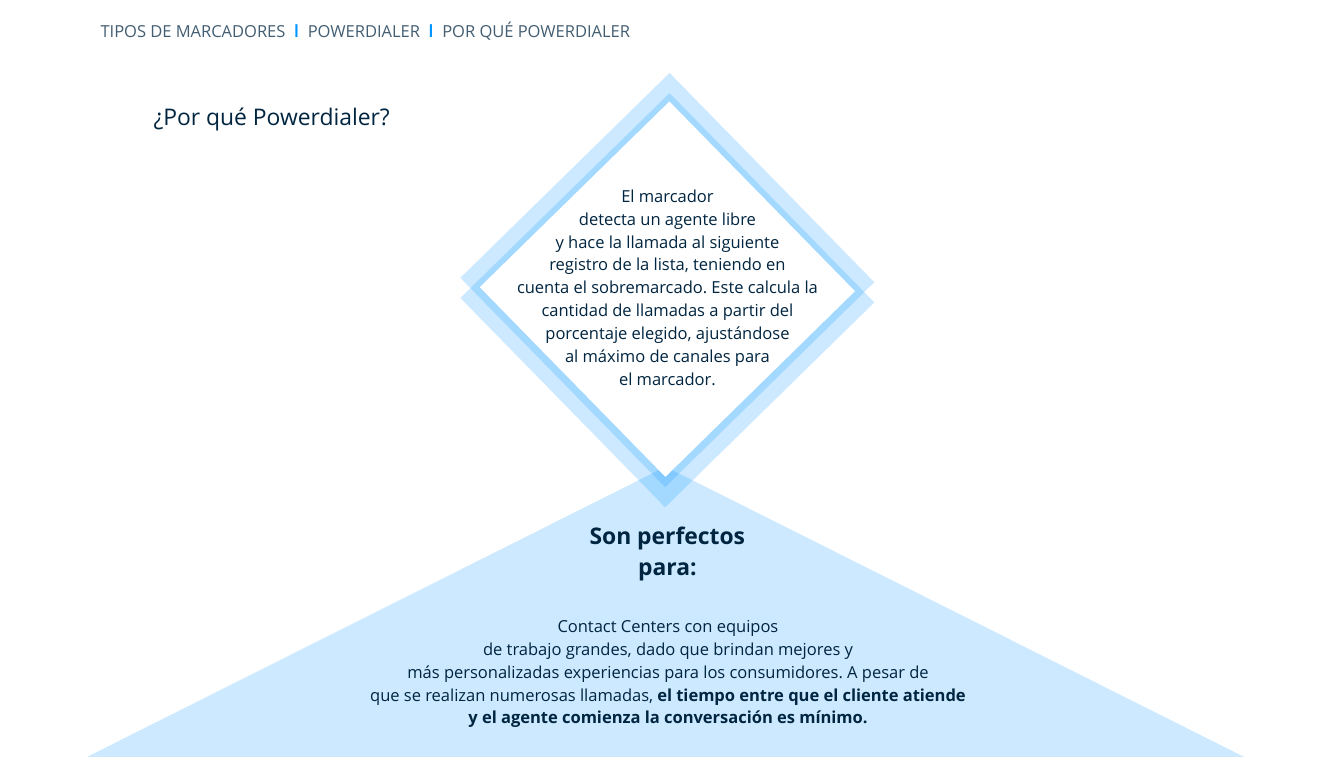
from lxml import etree
from pptx import Presentation
from pptx import util as u
from pptx.dml.color import RGBColor
from pptx.enum import shapes, text
from pptx.oxml import ns

WHITE = RGBColor(0xFF, 0xFF, 0xFF)
BLUE = RGBColor(0x00, 0x95, 0xFF)
NAVY = RGBColor(0x00, 0x25, 0x40)
SLATE = RGBColor(0x43, 0x5E, 0x72)

BREADCRUMB = ["TIPOS DE MARCADORES", "POWERDIALER", "POR QUÉ POWERDIALER"]
DESCRIPTION = [
    "El marcador",
    "detecta un agente libre",
    "y hace la llamada al siguiente",
    "registro de la lista, teniendo en",
    "cuenta el sobremarcado. Este calcula la cantidad de llamadas a partir del "
    "porcentaje elegido, ajustándose",
    "al máximo de canales para",
    "el marcador.",
]
AUDIENCE = [
    "Contact Centers con equipos",
    "de trabajo grandes, dado que brindan mejores y",
    "más personalizadas experiencias para los consumidores. A pesar de",
    [("que se realizan numerosas llamadas, ", False),
     ("el tiempo entre que el cliente atiende", True)],
    [("y el agente comienza la conversación es mínimo.", True)],
]


def add_run(paragraph, content, size=13, color=NAVY, bold=False, font="Open Sans"):
    """Add one formatted run to a paragraph."""
    run = paragraph.add_run()
    run.text = content
    run.font.name = font
    run.font.size = u.Pt(size)
    run.font.bold = bold
    run.font.color.rgb = color


def set_frame(frame, margin_x, margin_y, anchor):
    """Set wrapping, margins and anchor of a text frame."""
    frame.word_wrap = True
    frame.auto_size = text.MSO_AUTO_SIZE.NONE
    frame.vertical_anchor = anchor
    frame.margin_left = frame.margin_right = u.Inches(margin_x)
    frame.margin_top = frame.margin_bottom = u.Inches(margin_y)


def add_text(slide, box, lines, margins=(0.1, 0.1), spacing=1.15, size=13, bold=False):
    """Add a centred text box with one paragraph per line."""
    frame = slide.shapes.add_textbox(*map(u.Inches, box)).text_frame
    set_frame(frame, *margins, text.MSO_ANCHOR.TOP)
    for index, line in enumerate(lines):
        paragraph = frame.add_paragraph() if index else frame.paragraphs[0]
        paragraph.alignment = text.PP_ALIGN.CENTER
        paragraph.line_spacing = spacing
        pieces = [(line, bold)] if isinstance(line, str) else line
        for content, is_bold in pieces:
            add_run(paragraph, content, size=size, bold=is_bold)


def add_panel(slide, kind, box, color, opacity=100, rotation=0):
    """Add a plain filled shape without outline."""
    shape = slide.shapes.add_shape(kind, *map(u.Inches, box))
    shape.shadow.inherit = False
    shape.line.fill.background()
    shape.fill.solid()
    shape.fill.fore_color.rgb = color
    shape.rotation = rotation
    if opacity < 100:
        tint = shape.fill._xPr.find(ns.qn("a:solidFill"))[0]
        etree.SubElement(tint, ns.qn("a:alpha"), val=str(opacity * 1000))


def add_breadcrumb(slide, box):
    """Fill the title with the breadcrumb and its blue dividers."""
    title = slide.shapes.title
    title.left, title.top, title.width, title.height = map(u.Inches, box)
    title.fill.solid()
    title.fill.fore_color.rgb = WHITE
    set_frame(title.text_frame, 0.15, 0.15, text.MSO_ANCHOR.MIDDLE)
    paragraph = title.text_frame.paragraphs[0]
    paragraph.alignment = text.PP_ALIGN.LEFT
    paragraph.line_spacing = 1.0
    last = len(BREADCRUMB) - 1
    for index, step in enumerate(BREADCRUMB):
        if index:
            add_run(paragraph, "|", size=14, color=BLUE, bold=True, font="Manrope")
        before, after = "  " if index else "", "  " if index < last else ""
        add_run(paragraph, before + step + after, color=SLATE)


def add_audience(slide, box):
    """Add the wide triangle with its heading and text."""
    left, top, width, height = box
    center = left + width / 2
    add_panel(slide, shapes.MSO_SHAPE.ISOSCELES_TRIANGLE, box, BLUE, opacity=20)
    add_text(slide, (center - 3.46, top + 1.5, 6.97, height - 1.74), AUDIENCE)
    add_text(slide, (center - 1.18, top + 0.49, 2.4, 0.84), ["Son perfectos para:"],
             margins=(0.11, 0.06), size=18, bold=True)


def add_diamond(slide, box):
    """Add the layered diamond and the description inside it."""
    left, top, width, height = box
    center = left + width / 2
    layers = [(3.2, 1.6, BLUE, 20), (3.2, 1.38, BLUE, 20), (2.9, 1.48, WHITE, 100)]
    for side, middle, color, opacity in layers:
        square = (center - side / 2, top + middle - side / 2, side, side)
        add_panel(slide, shapes.MSO_SHAPE.RECTANGLE, square, color, opacity, rotation=45.6)
    add_text(slide, (left, top + 0.22, width, height - 0.22), DESCRIPTION)


def main():
    """Build and save the slide."""
    presentation = Presentation()
    presentation.slide_width = u.Inches(14.69)
    presentation.slide_height = u.Inches(8.27)
    slide = presentation.slides.add_slide(presentation.slide_layouts[5])
    add_breadcrumb(slide, (0.95, 0.1, 7.27, 0.47))
    add_audience(slide, (0.95, 5.1, 12.65, 3.17))
    add_diamond(slide, (5.53, 1.68, 3.53, 3.22))
    add_text(slide, (0.68, 0.91, 4.58, 0.56), ["¿Por qué Powerdialer?"],
             margins=(0.11, 0.06), spacing=1.5, size=18)
    presentation.save("out.pptx")


if __name__ == "__main__":
    main()
